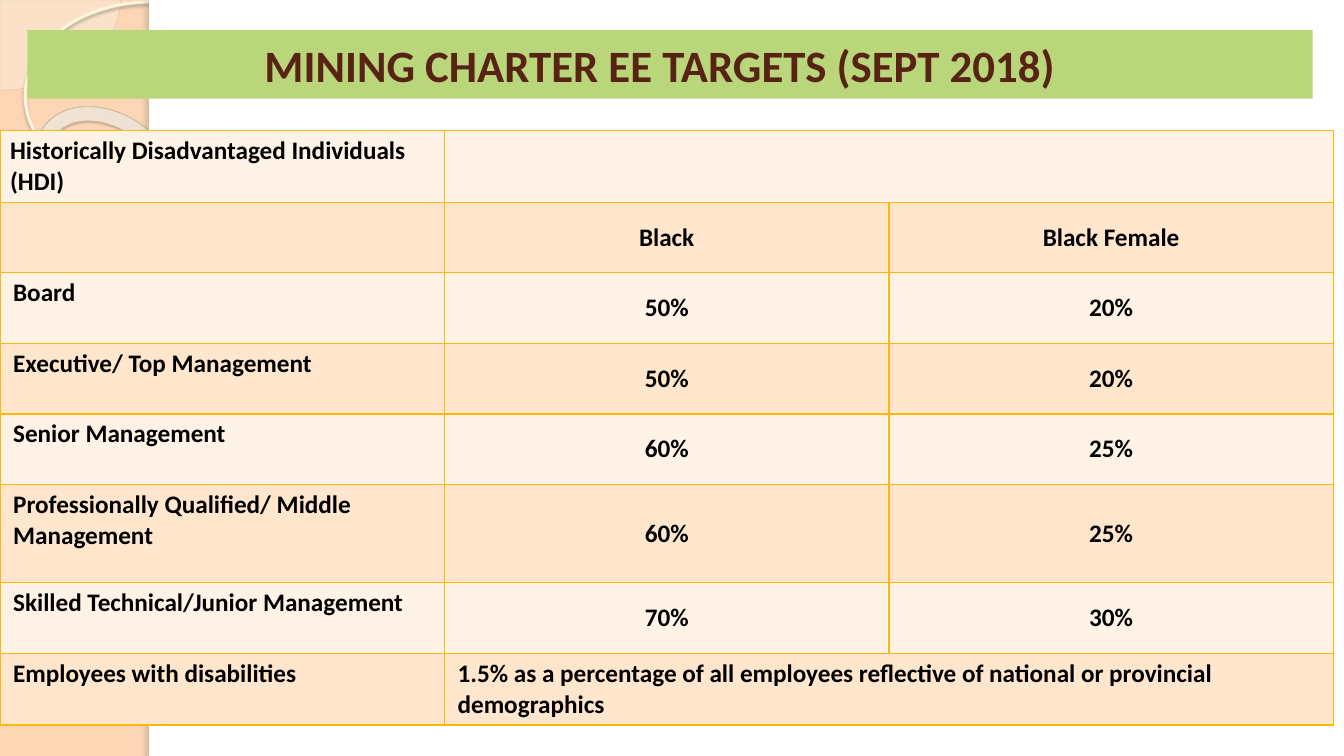
from lxml import etree
from pptx import Presentation
from pptx.dml.color import RGBColor
from pptx.enum.shapes import MSO_SHAPE
from pptx.enum.text import MSO_ANCHOR, MSO_AUTO_SIZE, PP_ALIGN
from pptx.oxml import parse_xml
from pptx.oxml.ns import qn
from pptx.util import Pt

PIE, OVAL, DONUT, RECT = MSO_SHAPE.PIE, MSO_SHAPE.OVAL, MSO_SHAPE.DONUT, MSO_SHAPE.RECTANGLE
TOP, MIDDLE = MSO_ANCHOR.TOP, MSO_ANCHOR.MIDDLE
LEFT, CENTER = PP_ALIGN.LEFT, PP_ALIGN.CENTER

PEACH = RGBColor(0xFC, 0xD5, 0xB4)
IVORY = RGBColor(0xFE, 0xFA, 0xF4)
SAND = RGBColor(0xD3, 0xC3, 0x9F)
CREAM = RGBColor(0xFF, 0xF5, 0xDE)
KHAKI = RGBColor(0xC7, 0xB8, 0x93)
WHITE = RGBColor(0xFF, 0xFF, 0xFF)
BLACK = RGBColor(0, 0, 0)
GREEN = RGBColor(0xB9, 0xD7, 0x7A)
BROWN = RGBColor(0x57, 0x23, 0x14)
AMBER = RGBColor(0xFE, 0xB8, 0x0A)
BANDS = RGBColor(0xFF, 0xF3, 0xE7), RGBColor(0xFF, 0xE6, 0xCC)
OVAL_SHADE = RGBColor(0xB0, 0xA6, 0x8F)
RING_SHADE = RGBColor(0x5A, 0x54, 0x44)
STRIP_SHADE = RGBColor(0x73, 0x6F, 0x63)

TITLE = "MINING CHARTER EE TARGETS (SEPT 2018)"
HEADING = "Historically Disadvantaged Individuals (HDI)"
DISABILITY_TARGET = ("1.5% as a percentage of all employees reflective of "
                     "national or provincial demographics")
ROWS = [
    (HEADING, "", ""),
    ("", "Black", "Black Female"),
    ("Board", "50%", "20%"),
    ("Executive/ Top Management", "50%", "20%"),
    ("Senior Management", "60%", "25%"),
    ("Professionally Qualified/ Middle Management", "60%", "25%"),
    ("Skilled Technical/Junior Management", "70%", "30%"),
    ("Employees with disabilities", DISABILITY_TARGET, ""),
]
MERGED_ROWS = 0, len(ROWS) - 1
TALL_ROW = 5
TABLE_TOP, COLUMN_WIDTH, ROW_HEIGHT, TALL_HEIGHT = 93.3, 317.5, 50.4, 70.2

# kind, box, fill, (line colour, width), (shadow colour, alpha %, blur, distance, angle)
DECOR = {
    "pie": (PIE, (-86, -64.4, 172, 128.8), IVORY, (SAND, 0.25), None),
    "oval": (OVAL, (18, 1.4, 178.6, 134), None, (CREAM, 2.15), (OVAL_SHADE, 85, 2, 2, 90)),
    "ring": (DONUT, (19.4, 82.8, 118, 87), None, (KHAKI, 0.58), (RING_SHADE, 35, 1, 1.2, 75)),
    "panel": (RECT, (106.6, 0, 853.4, 540), WHITE, None, None),
    "strip": (RECT, (106.6, 0, 8, 540), WHITE, None, (STRIP_SHADE, 25, 3, 3, 180)),
}
RING_STOPS = [(0, "FFFCF6", 70), (70, "FFFEFB", 55), (100, "F0D28E", 60)]
DRAWING_NS = 'xmlns:a="http://schemas.openxmlformats.org/drawingml/2006/main"'


def set_values(target, values):
    for name, value in values.items():
        setattr(target, name, value)


def add_alpha(color_element, percent):
    etree.SubElement(color_element, qn("a:alpha"), val=str(percent * 1000))


def add_shadow(shape, color, alpha, blur, distance, angle):
    effects = shape._element.spPr.find(qn("a:effectLst"))
    shadow = etree.SubElement(effects, qn("a:outerShdw"), blurRad=str(Pt(blur)),
                              dist=str(Pt(distance)), dir=str(angle * 60000),
                              algn="tl", rotWithShape="0")
    add_alpha(etree.SubElement(shadow, qn("a:srgbClr"), val=str(color)), alpha)


def add_decor(slide, kind, box, fill, line, shadow):
    shape = slide.shapes.add_shape(kind, *map(Pt, box))
    shape.shadow.inherit = False
    if fill is None:
        shape.fill.background()
    else:
        shape.fill.solid()
        shape.fill.fore_color.rgb = fill
    if line:
        shape.line.color.rgb, shape.line.width = line[0], Pt(line[1])
    else:
        shape.line.fill.background()
    if shadow:
        add_shadow(shape, *shadow)
    return shape


def fill_ring(ring):
    stops = "".join(
        f'<a:gs pos="{place * 1000}"><a:srgbClr val="{color}">'
        f'<a:alpha val="{alpha * 1000}"/></a:srgbClr></a:gs>'
        for place, color, alpha in RING_STOPS)
    gradient = parse_xml(
        f'<a:gradFill {DRAWING_NS}><a:gsLst>{stops}</a:gsLst><a:path path="circle">'
        '<a:fillToRect l="-408000" t="-50000" r="508000" b="150000"/></a:path></a:gradFill>')
    properties = ring._element.spPr
    properties.replace(properties.find(qn("a:noFill")), gradient)


def write(frame, text, align, size, color):
    para = frame.paragraphs[0]
    para.alignment = align
    span = para.add_run()
    span.text = text
    set_values(span.font, {"size": Pt(size), "name": "Calibri", "bold": True})
    span.font.color.rgb = color
    return para


def add_borders(cell):
    properties = cell._tc.get_or_add_tcPr()
    for side in ("lnL", "lnR", "lnT", "lnB"):
        properties.append(parse_xml(
            f'<a:{side} {DRAWING_NS} w="{Pt(1)}"><a:solidFill>'
            f'<a:srgbClr val="{AMBER}"/></a:solidFill></a:{side}>'))


def format_cell(cell, row, column, text):
    add_borders(cell)
    cell.fill.solid()
    cell.fill.fore_color.rgb = BANDS[row % 2]
    centered = column > 0 and row not in MERGED_ROWS
    side = Pt(7.2 if row == 0 else 9.4)
    set_values(cell, {"margin_left": side, "margin_right": side,
                      "margin_top": Pt(3.6), "margin_bottom": Pt(3.6),
                      "vertical_anchor": MIDDLE if centered else TOP})
    if text:
        para = write(cell.text_frame, text, CENTER if centered else LEFT, 18, BLACK)
        if text == DISABILITY_TARGET:
            set_values(para._p.get_or_add_pPr(), {"marL": Pt(41.8), "indent": 0})


def add_targets(slide):
    height = ROW_HEIGHT * (len(ROWS) - 1) + TALL_HEIGHT
    table = slide.shapes.add_table(len(ROWS), 3, 0, Pt(TABLE_TOP),
                                   Pt(3 * COLUMN_WIDTH), Pt(height)).table
    for column in table.columns:
        column.width = Pt(COLUMN_WIDTH)
    for row, texts in enumerate(ROWS):
        table.rows[row].height = Pt(TALL_HEIGHT if row == TALL_ROW else ROW_HEIGHT)
        for column, text in enumerate(texts):
            format_cell(table.cell(row, column), row, column, text)
    for row in MERGED_ROWS:
        table.cell(row, 1).merge(table.cell(row, 2))


def add_title(slide):
    title = slide.shapes.title
    set_values(title, {"left": Pt(19.6), "top": Pt(21.6), "width": Pt(918), "height": Pt(48.8)})
    title.fill.solid()
    title.fill.fore_color.rgb = GREEN
    set_values(title.text_frame, {"vertical_anchor": MIDDLE, "word_wrap": True,
                                  "auto_size": MSO_AUTO_SIZE.NONE, "margin_right": Pt(21.6)})
    write(title.text_frame, TITLE, CENTER, 32, BROWN)
    slide.shapes._spTree.append(title._element)  # bring in front of the decoration


def main():
    deck = Presentation()
    deck.slide_width, deck.slide_height = Pt(960), Pt(540)
    slide = deck.slides.add_slide(deck.slide_layouts[5])
    slide.background.fill.solid()
    slide.background.fill.fore_color.rgb = PEACH
    decor = {name: add_decor(slide, *values) for name, values in DECOR.items()}
    decor["pie"].adjustments[0] = 0
    decor["pie"].adjustments[1] = 54
    add_alpha(decor["pie"]._element.spPr.find(qn("a:solidFill"))[0], 33)
    decor["ring"].adjustments[0] = 0.12
    decor["ring"].rotation = 38.6
    fill_ring(decor["ring"])
    add_title(slide)
    add_targets(slide)
    deck.save("out.pptx")


if __name__ == "__main__":
    main()
